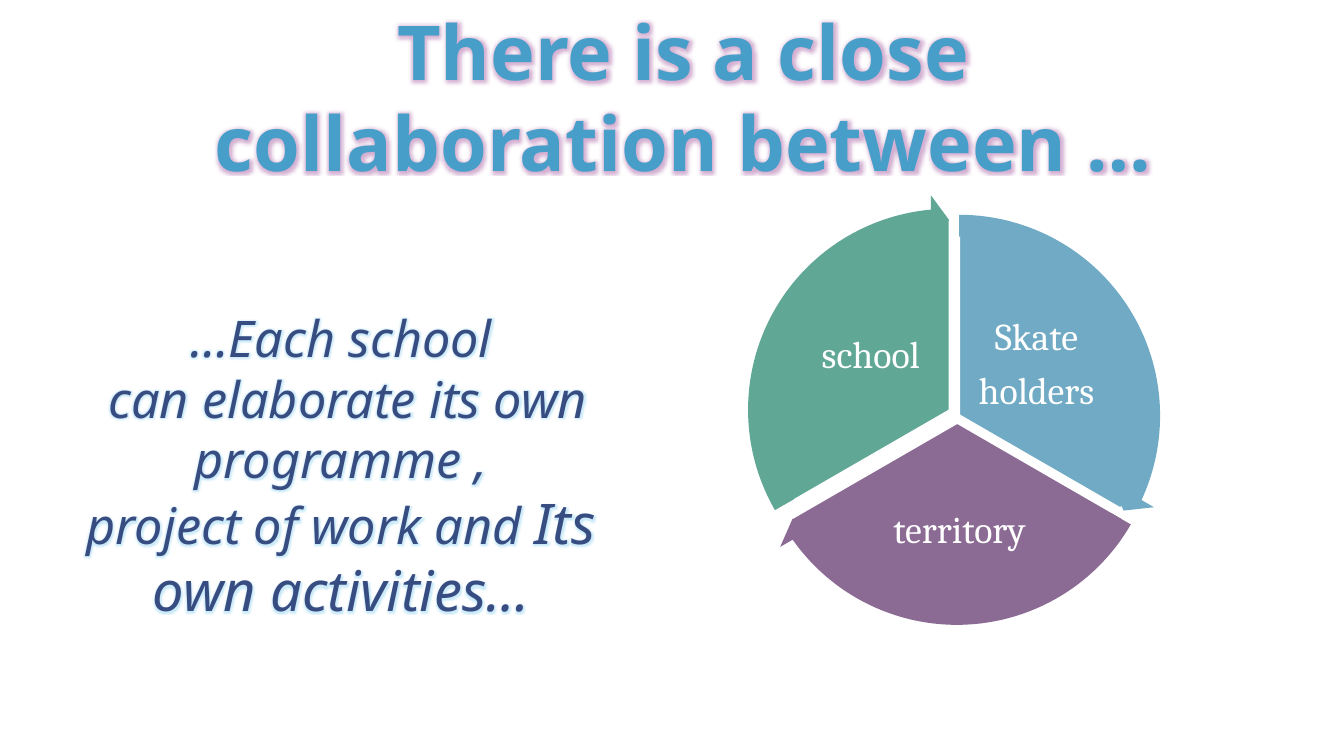
from lxml import etree
from pptx import Presentation
from pptx.dml.color import RGBColor
from pptx.enum.shapes import MSO_SHAPE
from pptx.enum.text import MSO_ANCHOR, MSO_AUTO_SIZE, PP_ALIGN
from pptx.oxml.ns import qn
from pptx.util import Cm, Pt

PIE = MSO_SHAPE.PIE
CIRCULAR_ARROW = MSO_SHAPE.CIRCULAR_ARROW
MIDDLE = MSO_ANCHOR.MIDDLE
CENTER = PP_ALIGN.CENTER
GROW = MSO_AUTO_SIZE.SHAPE_TO_FIT_TEXT


def paint(target, color):
    target.solid()
    target.fore_color.rgb = RGBColor.from_string(color)


def add_run(paragraph, text, size, font, color, glow=None):
    paragraph.alignment = CENTER
    run = paragraph.add_run()
    run.text = text
    run.font.size = Pt(size)
    run.font.name = font
    paint(run.font.fill, color)
    if glow:
        glow_color, radius = glow
        effects = etree.Element(qn("a:effectLst"))
        halo = etree.SubElement(effects, qn("a:glow"), rad=str(Pt(radius)))
        tint = etree.SubElement(halo, qn("a:srgbClr"), val=glow_color)
        etree.SubElement(tint, qn("a:alpha"), val="60000")
        run.font._element.find(qn("a:latin")).addprevious(effects)
    return run


prs = Presentation()
prs.slide_width = Cm(33.87)
prs.slide_height = Cm(19.05)
slide = prs.slides.add_slide(prs.slide_layouts[6])
shapes = slide.shapes

partners = [
    (["Skate", "holders"], "70AAC4", (19.43, 5.94, 9.5, 9.04), (162, 18),
     (24.43, 7.87, 3.38, 2.69), (18.75, 5.05), (14.725, 161.994)),
    (["territory"], "8B6A94", (19.3, 5.84, 9.65, 9.65), (18, 90),
     (21.59, 12.12, 5.18, 2.54), (18.69, 5.26), (86.72, 18.005)),
    (["school"], "61A796", (19.1, 5.51, 9.65, 9.65), (90, 162),
     (20.22, 7.54, 3.45, 2.87), (18.49, 4.9), (158.73, 90)),
]

for words, color, sector_box, sector_angles, label_box, _, _ in partners:
    sector = shapes.add_shape(PIE, *map(Cm, sector_box))
    sector.shadow.inherit = False
    for index, angle in enumerate(sector_angles):
        sector.adjustments[index] = angle
    paint(sector.fill, color)
    paint(sector.line.fill, "FFFFFF")
    sector.line.width = Pt(1)

    label = shapes.add_textbox(*map(Cm, label_box)).text_frame
    label.word_wrap = True
    label.vertical_anchor = MIDDLE
    label.margin_left = label.margin_right = Cm(0.1)
    label.margin_top = label.margin_bottom = Cm(0.1)
    for index, word in enumerate(words):
        line = label.add_paragraph() if index else label.paragraphs[0]
        line.line_spacing = 0.9
        line.space_after = Pt(9.45)
        add_run(line, word, 27, "Cambria", "FFFFFF")

for _, color, _, _, _, (left, top), (head_angle, tail_angle) in partners:
    rim = shapes.add_shape(CIRCULAR_ARROW, Cm(left), Cm(top), Cm(10.85), Cm(10.85))
    rim.shadow.inherit = False
    for index, value in enumerate((0.051, 3.275, head_angle, tail_angle, 0.059)):
        rim.adjustments[index] = value
    paint(rim.fill, color)
    rim.line.fill.background()

autonomy = shapes.add_textbox(Cm(1.85), Cm(6.81), Cm(13.49), Cm(9.83)).text_frame
autonomy.word_wrap = True
autonomy.auto_size = GROW
autonomy.vertical_anchor = MIDDLE
statements = [
    [("…Each school", 36)],
    [(" can elaborate its own programme ,", 36)],
    [("project of work and ", 36), ("Its own activities…", 40)],
]
for index, statement in enumerate(statements):
    line = autonomy.add_paragraph() if index else autonomy.paragraphs[0]
    for text, size in statement:
        run = add_run(line, text, size, "Noto Sans", "374C81", ("A9DDF5", 3))
        run.font.italic = True

title = shapes.add_textbox(Cm(3.76), Cm(0), Cm(26.9), Cm(4.88)).text_frame
title.word_wrap = False
title.auto_size = GROW
for index, text in enumerate(["There is a close", " collaboration between … "]):
    line = title.add_paragraph() if index else title.paragraphs[0]
    run = add_run(line, text, 54, "Noto Sans", "479EC8", ("B77BB4", 5))
    run.font.bold = True

prs.save("out.pptx")
